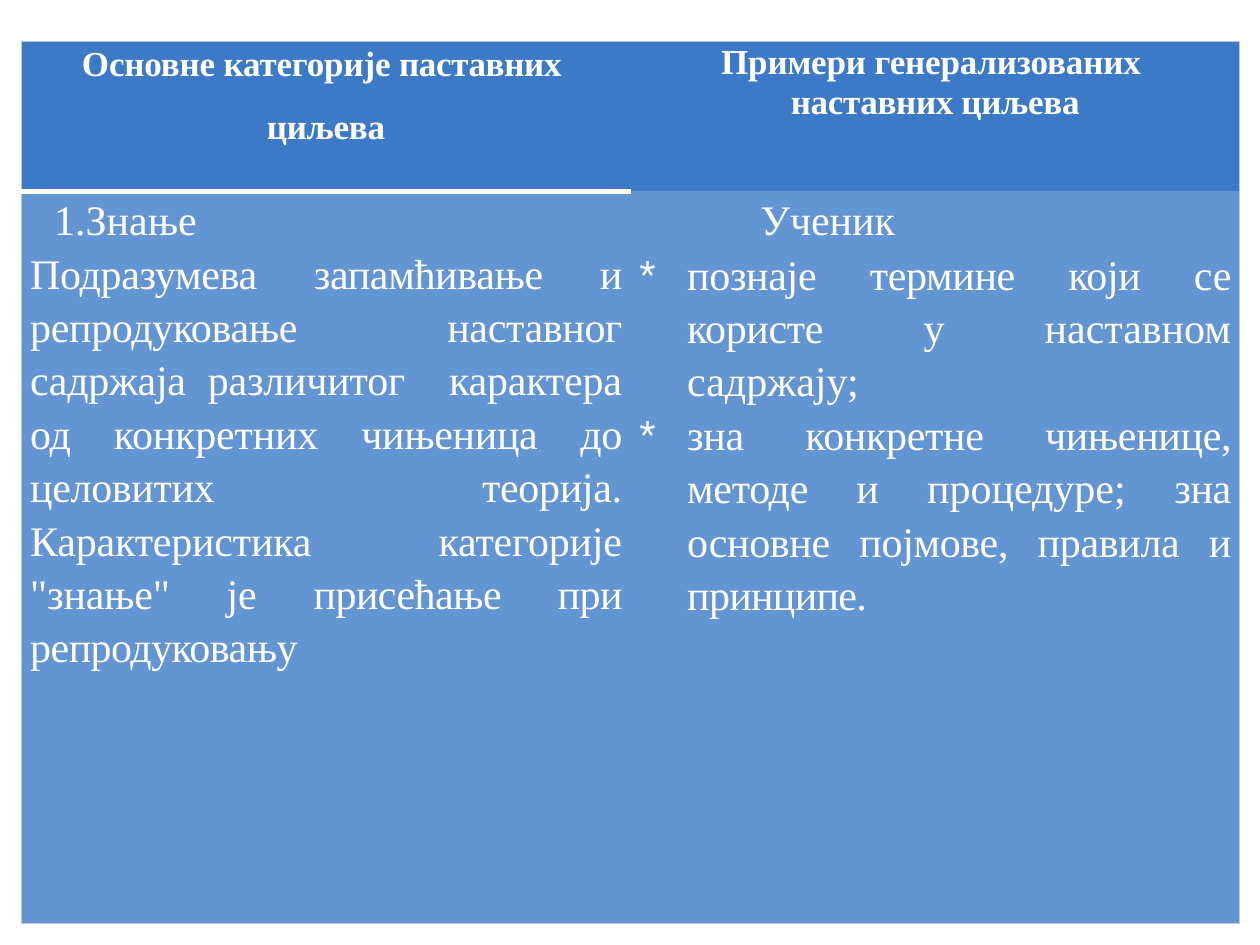
from lxml import etree
from pptx import Presentation
from pptx import util as u
from pptx.dml import color
from pptx.enum import text
from pptx.oxml import ns

FONT = "Times New Roman"
WHITE, EDGE, HEAD_FILL, BODY_FILL = "FFFFFF", "BDC8DD", "3C7AC8", "6395D3"
CENTER, JUSTIFY = text.PP_ALIGN.CENTER, text.PP_ALIGN.JUSTIFY


def rgb(value):
    """Turn a hex string into a colour."""
    return color.RGBColor.from_string(value)


def add_node(parent, tag, **attributes):
    """Append a DrawingML element to a parent."""
    return etree.SubElement(parent, ns.qn(f"a:{tag}"), attributes)


def style_cell(cell, fill, borders, top=0):
    """Set margins, the four borders and the fill of a cell."""
    cell.margin_left = cell.margin_right = u.Inches(0.07)
    cell.margin_top, cell.margin_bottom = u.Inches(top), 0
    properties = cell._tc.get_or_add_tcPr()
    for side in "LRTB":
        hue, width = borders.get(side, (None, 0))
        line = add_node(properties, f"ln{side}", w=str(u.Pt(width)))
        if hue:
            add_node(add_node(line, "solidFill"), "srgbClr", val=hue)
        else:
            add_node(line, "noFill")
    cell.fill.solid()
    cell.fill.fore_color.rgb = rgb(fill)


def write_para(para, runs, size, align, spacing, before=0, left=0, indent=0,
               bold=False, bullet=None):
    """Fill a paragraph with (text, tracking) runs; a newline is a line break."""
    para.alignment = align
    para.line_spacing = spacing
    para.space_before = u.Pt(before)
    properties = para._p.get_or_add_pPr()
    properties.set("marL", str(u.Inches(left)))
    properties.set("indent", str(u.Inches(indent)))
    if bullet:
        add_node(properties, "buFont", typeface="Arial")
        add_node(properties, "buChar", char=bullet)
    for words, tracking in runs:
        span = para.add_run()
        span.text = words.rstrip("\n")
        span.font.name = FONT
        span.font.size = u.Pt(size)
        span.font.bold = bold
        span.font.color.rgb = rgb(WHITE)
        span._r.get_or_add_rPr().set("spc", str(round(tracking * 100)))
        if words.endswith("\n"):
            para.add_line_break()


def write_cell(cell, paras, **shared):
    """Write (runs, options) paragraphs into a cell."""
    frame = cell.text_frame
    for index, (runs, options) in enumerate(paras):
        para = frame.add_paragraph() if index else frame.paragraphs[0]
        write_para(para, runs, **{**shared, **options})


def fill_header(left_cell, right_cell):
    """Build the heading row."""
    edge, rule = (EDGE, 0.75), (WHITE, 3)
    style_cell(left_cell, HEAD_FILL, {"L": edge, "T": edge, "B": rule}, 0.17)
    style_cell(right_cell, HEAD_FILL, {"R": edge, "T": edge}, 0.16)
    shared = dict(size=20, align=CENTER, bold=True)
    write_cell(left_cell, [
        ([("Основне категорије ", -0.1), ("паставних ", -0.2)], {}),
        ([("циљева", -0.2)], {"before": 24}),
    ], spacing=u.Pt(12), left=0.07, indent=-0.07, **shared)
    write_cell(right_cell, [
        ([("Примери генерализованих ", -0.1)], {}),
        ([("наставних циљева", -0.2)], {"before": 11.5}),
    ], spacing=u.Pt(11.5), left=0.05, indent=-0.05, **shared)


def fill_body(left_cell, right_cell):
    """Build the row with the category and its examples."""
    edge, rule = (EDGE, 0.75), (WHITE, 3)
    style_cell(left_cell, BODY_FILL, {"L": edge, "T": rule, "B": edge})
    style_cell(right_cell, BODY_FILL, {"R": edge, "B": edge})
    shared = dict(size=24, align=JUSTIFY, spacing=1.15)
    write_cell(left_cell, [([
        ("1.Знање\n", 0),
        ("Подразумева запамћивање и репродуковање наставног садржаја ", -0.2),
        ("различитог  карактера од конкретних ", -0.1),
        ("чињеница до целовитих теорија.\n", -0.2),
        ("Карактеристика категорије \"знање\" је ", -0.1),
        ("присећање при репродуковању", -0.3),
    ], {"indent": 0.19})], **shared)
    item = dict(left=0.38, indent=-0.38, bullet="*")
    write_cell(right_cell, [
        ([("Ученик", 0)], {"left": 0.96}),
        ([("познаје термине који се користе у ", -0.2),
          ("наставном садржају;", 0)], {"before": 0.5, **item}),
        ([("зна конкретне чињенице, методе и ", -0.2), ("процедуре; ", 0),
          ("зна основне појмове, правила и ", -0.2),
          ("принципе.", -0.4)], {"before": 0.2, **item}),
    ], **shared)


def add_goal_table(page, left, top, width, height):
    """Place the table of teaching goals in the given box."""
    header_height = u.Inches(1.19)
    table = page.shapes.add_table(2, 2, left, top, width, height).table
    for column in table.columns:
        column.width = width // 2
    table.rows[0].height = header_height
    table.rows[1].height = height - header_height
    fill_header(table.cell(0, 0), table.cell(0, 1))
    fill_body(table.cell(1, 0), table.cell(1, 1))


def main():
    """Build and save the deck."""
    deck = Presentation()
    deck.slide_width, deck.slide_height = u.Inches(10), u.Inches(7.5)
    page = deck.slides.add_slide(deck.slide_layouts[6])
    add_goal_table(page, u.Inches(0.17), u.Inches(0.33),
                   u.Inches(9.67), u.Inches(7))
    deck.save("out.pptx")


if __name__ == "__main__":
    main()
